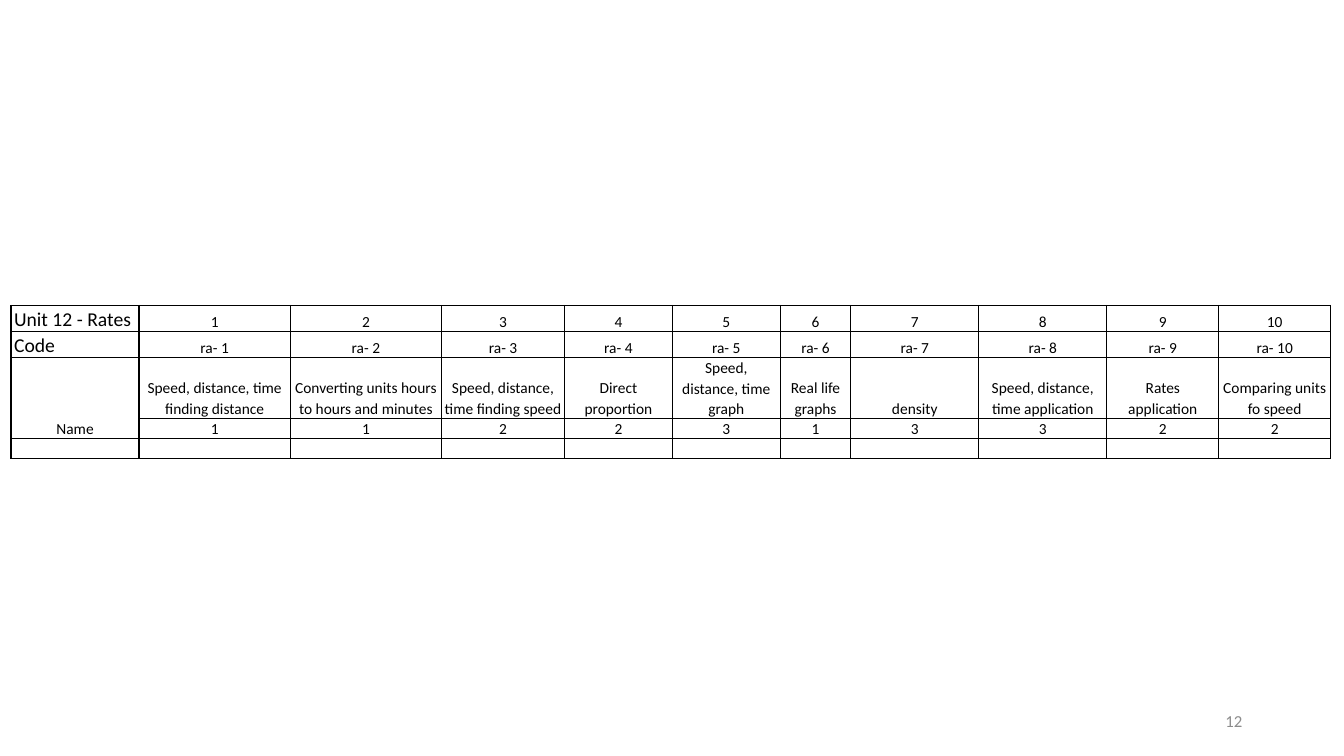
"""Build the Unit 12 rates overview slide."""
import dataclasses

import lxml.etree
import pptx
import pptx.dml.color
import pptx.enum.text
import pptx.oxml.ns
import pptx.util

Inches = pptx.util.Inches
Pt = pptx.util.Pt
Align = pptx.enum.text.PP_ALIGN
Anchor = pptx.enum.text.MSO_ANCHOR
qn = pptx.oxml.ns.qn


@dataclasses.dataclass(frozen=True)
class Theme:
    """Hold the colours and type sizes."""
    font: str = "Calibri"
    ink: str = "000000"
    muted: str = "8C8C8C"
    paper: str = "FFFFFF"
    heading: int = 14
    body: int = 11
    number: int = 12
    border: int = 1
    line_spacing: float = 1.07


COLUMN_WIDTHS = [1.27, 1.5, 1.5, 1.22, 1.07, 1.07, 0.7, 1.27, 1.27, 1.11, 1.11]
ROW_HEIGHTS = [0.26, 0.26, 0.6, 0.2, 0.2]
TOPICS = [
    ("Speed, distance, time finding distance", 1),
    ("Converting units hours to hours and minutes", 1),
    ("Speed, distance, time finding speed", 2),
    ("Direct proportion", 2),
    ("Speed, distance, time graph", 3),
    ("Real life graphs", 1),
    ("density", 3),
    ("Speed, distance, time application", 3),
    ("Rates application", 2),
    ("Comparing units fo speed", 2),
]
NUMBERS = range(1, len(TOPICS) + 1)
ROWS = [
    ["Unit 12 - Rates", *map(str, NUMBERS)],
    ["Code", *(f"ra- {number}" for number in NUMBERS)],
    ["Name", *(topic for topic, level in TOPICS)],
    ["", *(str(level) for topic, level in TOPICS)],
    [""] * len(COLUMN_WIDTHS),
]


def apply(target, values):
    """Set attributes from a dict of format values."""
    for name, value in values.items():
        setattr(target, name, value)


class SlideBuilder:
    """Add styled elements to the current slide."""

    def __init__(self, slide, theme):
        """Keep the slide and its theme."""
        self.slide = slide
        self.theme = theme
        background = slide.background.fill
        background.solid()
        background.fore_color.rgb = pptx.dml.color.RGBColor.from_string(theme.paper)

    def paragraph(self, para, text, size, color, align):
        """Fill one formatted paragraph."""
        para.alignment = align
        if not text:
            lxml.etree.SubElement(para._p, qn("a:endParaRPr"), sz=str(size * 100))
            return
        span = para.add_run()
        span.text = text
        apply(span.font, {"name": self.theme.font, "size": Pt(size)})
        span.font.color.rgb = pptx.dml.color.RGBColor.from_string(color)

    def text(self, left, top, width, height, text, size, color, align):
        """Add a vertically centred text box."""
        box = self.slide.shapes.add_textbox(*map(Inches, (left, top, width, height)))
        frame = box.text_frame
        apply(frame, {"word_wrap": True, "vertical_anchor": Anchor.MIDDLE})
        self.paragraph(frame.paragraphs[0], text, size, color, align)

    def border(self, cell):
        """Draw a solid line on each side of a cell."""
        properties = cell._tc.get_or_add_tcPr()
        for position, side in enumerate(("lnL", "lnR", "lnT", "lnB")):
            line = lxml.etree.Element(qn(f"a:{side}"), w=str(int(Pt(self.theme.border))))
            fill = lxml.etree.SubElement(line, qn("a:solidFill"))
            lxml.etree.SubElement(fill, qn("a:srgbClr"), val=self.theme.ink)
            properties.insert(position, line)

    def cell(self, cell, text, size, align):
        """Fill and format one table cell."""
        apply(cell, {
            "margin_left": Inches(0.03), "margin_right": Inches(0.03),
            "margin_top": 0, "margin_bottom": 0,
            "vertical_anchor": Anchor.BOTTOM,
        })
        cell.fill.background()
        self.border(cell)
        para = cell.text_frame.paragraphs[0]
        para.line_spacing = self.theme.line_spacing
        self.paragraph(para, text, size, self.theme.ink, align)

    def table(self, left, top, widths, heights, rows):
        """Add the bordered table with its two left-aligned headings."""
        frame = self.slide.shapes.add_table(
            len(heights), len(widths), Inches(left), Inches(top),
            Inches(sum(widths)), Inches(sum(heights)))
        table = frame.table
        apply(table, {"first_row": False, "horz_banding": False})
        for column, width in zip(table.columns, widths):
            column.width = Inches(width)
        for row, height in zip(table.rows, heights):
            row.height = Inches(height)
        for row_index, row in enumerate(rows):
            for column_index, text in enumerate(row):
                heading = column_index == 0 and row_index < 2
                size = self.theme.heading if heading else self.theme.body
                align = Align.LEFT if heading else Align.CENTER
                self.cell(table.cell(row_index, column_index), text, size, align)
        table.cell(2, 0).merge(table.cell(3, 0))


def main():
    """Create and save the deck."""
    deck = pptx.Presentation()
    apply(deck, {"slide_width": Inches(13.33), "slide_height": Inches(7.5)})
    theme = Theme()
    page = SlideBuilder(deck.slides.add_slide(deck.slide_layouts[6]), theme)
    page.text(9.42, 6.95, 3, 0.4, "12", theme.number, theme.muted, Align.RIGHT)
    page.table(0.11, 3.03, COLUMN_WIDTHS, ROW_HEIGHTS, ROWS)
    deck.save("out.pptx")


if __name__ == "__main__":
    main()
